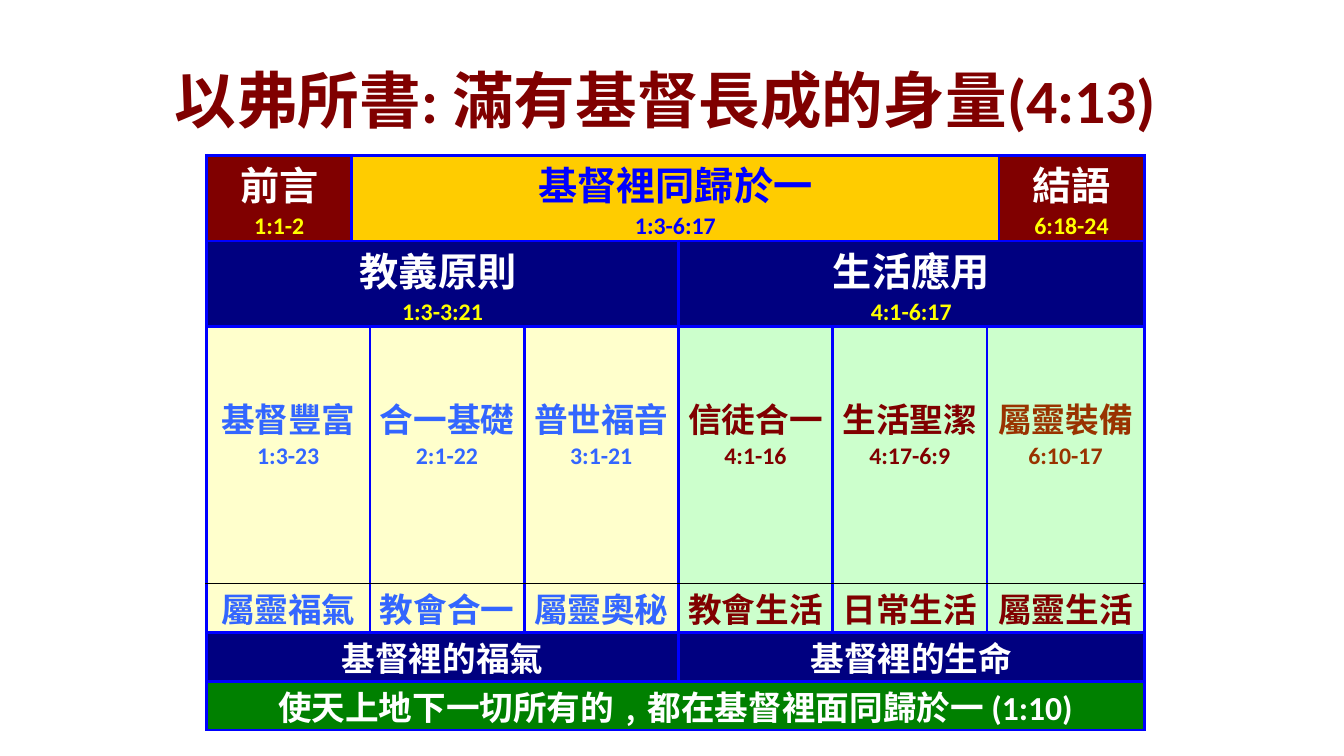
from itertools import accumulate
from lxml.etree import SubElement
from pptx import Presentation
from pptx.dml.color import RGBColor
from pptx.enum.lang import MSO_LANGUAGE_ID as Lang
from pptx.enum.text import PP_ALIGN as Align
from pptx.oxml.ns import qn
from pptx.util import Inches, Pt

W, H = 13.33, 7.5
HEAD, BODY = "Times New Roman", "Calibri"
WHITE, YELLOW, BLUE, BLACK = "FFFFFF", "FFFF00", "0000FF", "000000"
MAROON, GOLD, NAVY, GREEN = "800000", "FFCC00", "000080", "008000"
SKY, BROWN, CREAM, MINT = "3366FF", "993300", "FFFFCC", "CCFFCC"
COLS = [1.44, 0.12, 1.53, 1.53, 1.53, 1.53, 0.12, 1.44]
ROWS = [0.79, 0.79, 2.55, 0.34, 0.45, 0.47]
THEME_ROW = 2
THEME_TOP = 0.66
HALVES, SIXTHS = [4, 4], [2, 1, 1, 1, 1, 2]


def rgb(color):
    return RGBColor.from_string(color)


def add_run(p, text, size, color, font):
    r = p.add_run()
    r.text = text
    style = dict(size=Pt(size), bold=True, name=font,
                 language_id=Lang.TRADITIONAL_CHINESE)
    for key, value in style.items():
        setattr(r.font, key, value)
    r.font.color.rgb = rgb(color)


def add_title(slide, text):
    tf = slide.shapes.add_textbox(Inches(1.42), Inches(0.57),
                                  Inches(10.5), Inches(0.84)).text_frame
    tf.word_wrap = False
    p = tf.paragraphs[0]
    p.alignment = Align.CENTER
    add_run(p, text, 44, MAROON, BODY)


def set_borders(cell, top, bottom):
    """Outline a cell; top and bottom are (colour, points) pairs."""
    side = (BLUE, 2.25)
    tc_pr = cell._tc.get_or_add_tcPr()
    edges = dict(L=side, R=side, T=top, B=bottom)
    for i, (edge, (color, width)) in enumerate(edges.items()):
        ln = SubElement(tc_pr, qn(f"a:ln{edge}"), w=str(Pt(width)))
        fill = SubElement(ln, qn("a:solidFill"))
        SubElement(fill, qn("a:srgbClr"), val=color)
        tc_pr.insert(i, ln)


def format_cell(cell, row, fill):
    margins = dict(margin_left=0.07, margin_right=0.07, margin_bottom=0,
                   margin_top=THEME_TOP if row == THEME_ROW else 0)
    for key, value in margins.items():
        setattr(cell, key, Inches(value))
    cell.fill.solid()
    cell.fill.fore_color.rgb = rgb(fill)
    thick, thin = (BLUE, 2.25), (BLACK, 1)
    set_borders(cell, thin if row == THEME_ROW + 1 else thick,
                thin if row == THEME_ROW else thick)


def write_cell(cell, paragraphs):
    """Each paragraph is a list of (text, size, colour, font) runs."""
    tf = cell.text_frame
    for i, runs in enumerate(paragraphs):
        p = tf.add_paragraph() if i else tf.paragraphs[0]
        p.alignment = Align.CENTER
        for run in runs:
            add_run(p, *run)


def fill_row(table, row, spans, entries):
    """Each entry is (fill, paragraphs), laid over its span of columns."""
    starts = accumulate([0] + spans[:-1])
    for start, span, (fill, paragraphs) in zip(starts, spans, entries):
        for col in range(start, start + span):
            format_cell(table.cell(row, col), row, fill)
        cell = table.cell(row, start)
        if span > 1:
            cell.merge(table.cell(row, start + span - 1))
        write_cell(cell, paragraphs)


def section(fill, name, verses, color, verse_color, size=28):
    return fill, [[(name, size, color, HEAD)], [(verses, 17, verse_color, BODY)]]


def theme(fill, name, verses, color):
    return section(fill, name, verses, color, color, 24)


def label(fill, text, color):
    return fill, [[(text, 24, color, HEAD)]]


def add_outline(slide):
    frame = slide.shapes.add_table(len(ROWS), len(COLS), Inches(2.05), Inches(1.54),
                                   Inches(sum(COLS)), Inches(sum(ROWS)))
    table = frame.table
    table.first_row = table.horz_banding = False
    for col, width in zip(table.columns, COLS):
        col.width = Inches(width)
    for row, height in zip(table.rows, ROWS):
        row.height = Inches(height)

    rows = [
        ([1, 6, 1], [section(MAROON, "前言", "1:1-2", WHITE, YELLOW),
                     section(GOLD, "基督裡同歸於一", "1:3-6:17", BLUE, BLUE),
                     section(MAROON, "結語", "6:18-24", WHITE, YELLOW)]),
        (HALVES, [section(NAVY, "教義原則 ", "1:3-3:21", WHITE, YELLOW),
                  section(NAVY, "生活應用", "4:1-6:17", WHITE, YELLOW)]),
        (SIXTHS, [theme(CREAM, "基督豐富", "1:3-23", SKY),
                  theme(CREAM, "合一基礎", "2:1-22", SKY),
                  theme(CREAM, "普世福音", "3:1-21", SKY),
                  theme(MINT, "信徒合一", "4:1-16", MAROON),
                  theme(MINT, "生活聖潔", "4:17-6:9", MAROON),
                  theme(MINT, "屬靈裝備", "6:10-17", BROWN)]),
        (SIXTHS, [label(CREAM, t, SKY) for t in ("屬靈福氣", "教會合一", "屬靈奧秘")]
         + [label(MINT, t, MAROON) for t in ("教會生活", "日常生活", "屬靈生活")]),
        (HALVES, [label(NAVY, t, WHITE) for t in ("基督裡的福氣", "基督裡的生命")]),
        ([8], [(GREEN, [[("使天上地下一切所有的﹐都在基督裡面同歸於一 ", 24, WHITE, HEAD),
                         ("(1:10)", 24, WHITE, BODY)]])]),
    ]
    for i, (spans, entries) in enumerate(rows):
        fill_row(table, i, spans, entries)


def main():
    prs = Presentation()
    prs.slide_width, prs.slide_height = Inches(W), Inches(H)
    slide = prs.slides.add_slide(prs.slide_layouts[6])
    add_outline(slide)
    add_title(slide, "以弗所書: 滿有基督長成的身量(4:13) ")
    prs.save("out.pptx")


if __name__ == "__main__":
    main()
